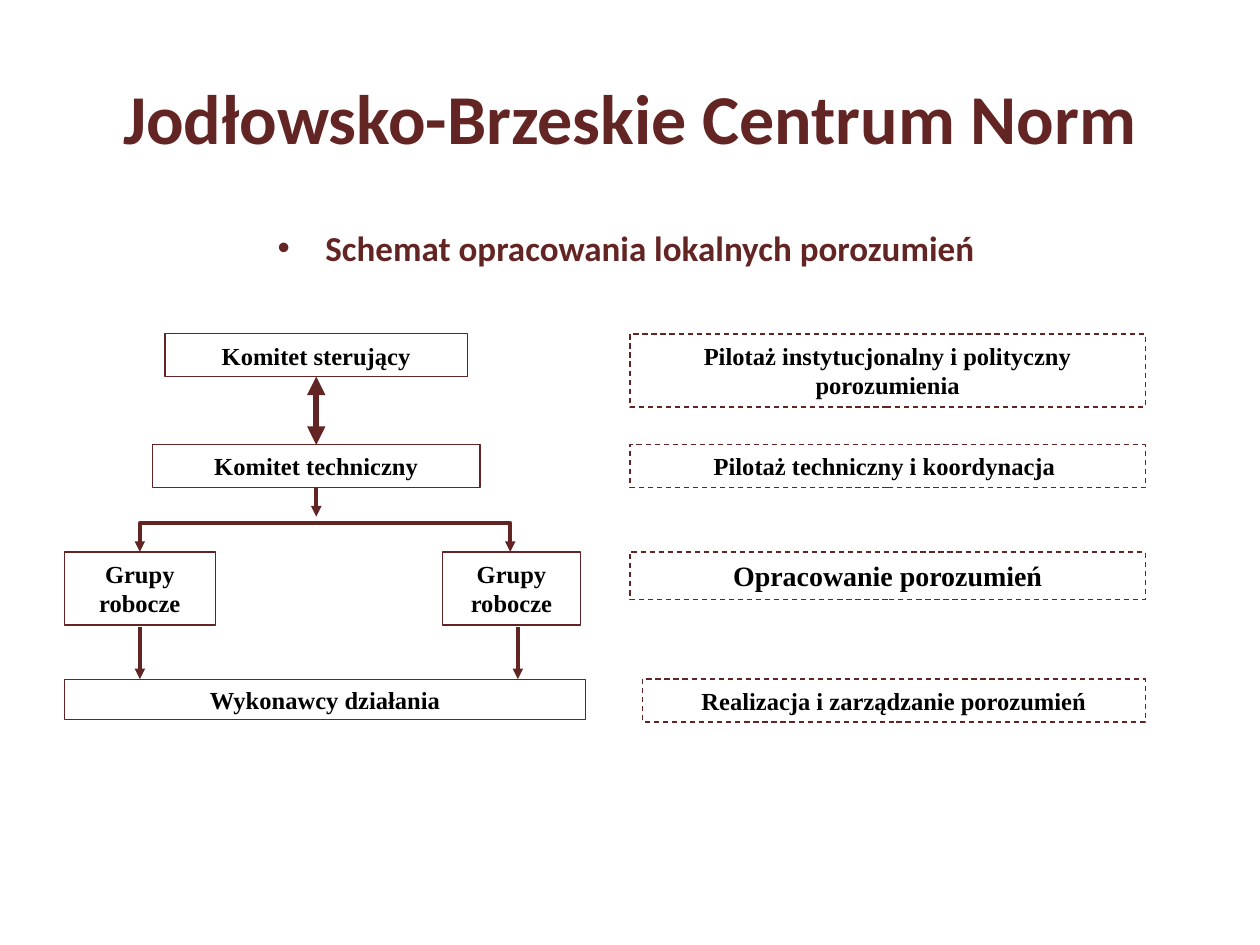
import pptx
import pptx.util
import pptx.dml.color
import pptx.enum.dml
import pptx.enum.shapes
import pptx.enum.text
import pptx.oxml
import pptx.oxml.ns
import lxml.etree

Inches = pptx.util.Inches
COLORS = {"wine": "632523", "ink": "000000"}
TITLE = "Jodłowsko-Brzeskie Centrum Norm"
LEAD = "Schemat opracowania lokalnych porozumień "
ROWS = {"steer": 2.65, "tech": 3.53, "group": 4.38, "work": 5.39}
UNITS = [
    ("steer", "Komitet sterujący", "steer", 1.31, 2.4, 0.34),
    ("tech", "Komitet techniczny", "tech", 1.21, 2.6, 0.34),
    ("right", "Grupy robocze", "group", 3.51, 1.1, 0.58),
    ("left", "Grupy robocze", "group", 0.51, 1.2, 0.58),
    ("work", "Wykonawcy działania", "work", 0.51, 4.14, 0.32),
]
TASKS = [
    ("Pilotaż instytucjonalny i polityczny porozumienia", "steer", 5, 0.58, 14),
    ("Pilotaż techniczny i koordynacja ", "tech", 5, 0.34, 14),
    ("Opracowanie porozumień", "group", 5, 0.38, 16),
    ("Realizacja i zarządzanie porozumień", "work", 5.1, 0.34, 14),
]
EDGE = 9.09
FORK = [(1.11, 4.38), (1.11, 4.15), (4.05, 4.15), (4.05, 4.38)]
DROPS = [1.11, 4.11]


def rgb(name):
    return pptx.dml.color.RGBColor.from_string(COLORS[name])


def write(shape, text, font, size, color):
    frame = shape.text_frame
    frame.word_wrap = True
    para = frame.paragraphs[0]
    para.text = text
    para.alignment = pptx.enum.text.PP_ALIGN.CENTER
    para.font.name = font
    para.font.size = pptx.util.Pt(size)
    para.font.bold = True
    para.font.color.rgb = rgb(color)
    return para


def place(shape, *spot):
    shape.left, shape.top, shape.width, shape.height = map(Inches, spot)


def add_box(shapes, text, spot, size=14, dash=False):
    box = shapes.add_shape(pptx.enum.shapes.MSO_SHAPE.RECTANGLE, *map(Inches, spot))
    box.shadow.inherit = False
    box.fill.background()
    box.line.color.rgb = rgb("wine")
    box.line.width = pptx.util.Pt(0.75)
    if dash:
        box.line.dash_style = pptx.enum.dml.MSO_LINE.DASH
    box.text_frame.vertical_anchor = pptx.enum.text.MSO_ANCHOR.MIDDLE
    write(box, text, "Times New Roman", size, "ink")
    return box


def style(shape, width, ends):
    shape.line.color.rgb = rgb("wine")
    shape.line.width = pptx.util.Pt(width)
    line = shape.line._get_or_add_ln()
    for end in ends:
        lxml.etree.SubElement(line, pptx.oxml.ns.qn("a:" + end), type="triangle")


def add_line(shapes, start, end, width, ends=("tailEnd",)):
    line = shapes.add_connector(
        pptx.enum.shapes.MSO_CONNECTOR.STRAIGHT, *map(Inches, start + end))
    style(line, width, ends)
    lxml.etree.SubElement(line._element.spPr, pptx.oxml.ns.qn("a:effectLst"))
    return line


def main():
    deck = pptx.Presentation()
    deck.slide_width, deck.slide_height = Inches(10), Inches(7.5)
    slide = deck.slides.add_slide(deck.slide_layouts[5])
    shapes = slide.shapes

    title = shapes.title
    place(title, 0.5, 0.3, 9, 1.25)
    title.text_frame.vertical_anchor = pptx.enum.text.MSO_ANCHOR.MIDDLE
    write(title, TITLE, "Calibri", 40, "wine")

    lead = shapes.add_textbox(*map(Inches, (0.5, 1.75, 9, 0.44)))
    props = write(lead, LEAD, "Calibri", 20, "wine")._p.get_or_add_pPr()
    props.set("marL", str(Inches(0.38)))
    props.set("indent", str(Inches(-0.38)))
    for tag, key, value in [("buFont", "typeface", "Arial"), ("buChar", "char", "•")]:
        mark = pptx.oxml.parse_xml(
            f'<a:{tag} {pptx.oxml.ns.nsdecls("a")} {key}="{value}"/>')
        props.insert_element_before(mark, "a:tabLst", "a:defRPr", "a:extLst")

    boxes = {}
    for key, text, row, left, width, height in UNITS:
        boxes[key] = add_box(shapes, text, (left, ROWS[row], width, height))
    for text, row, left, height, size in TASKS:
        add_box(shapes, text, (left, ROWS[row], EDGE - left, height), size, True)

    both = ("headEnd", "tailEnd")
    link = add_line(shapes, (2.51, 2.98), (2.51, 3.53), 3.5, both)
    link.begin_connect(boxes["steer"], 2)
    link.end_connect(boxes["tech"], 0)
    stem = add_line(shapes, (2.51, 3.87), (2.51, 4.1), 2)
    stem.begin_connect(boxes["tech"], 2)
    for x in DROPS:
        add_line(shapes, (x, 4.98), (x, ROWS["work"]), 2)

    points = [(Inches(x), Inches(y)) for x, y in FORK]
    outline = shapes.build_freeform(*points[0])
    outline.add_line_segments(points[1:], close=False)
    fork = outline.convert_to_shape()
    fork.shadow.inherit = False
    fork.fill.background()
    style(fork, 2, both)

    deck.save("out.pptx")


if __name__ == "__main__":
    main()
